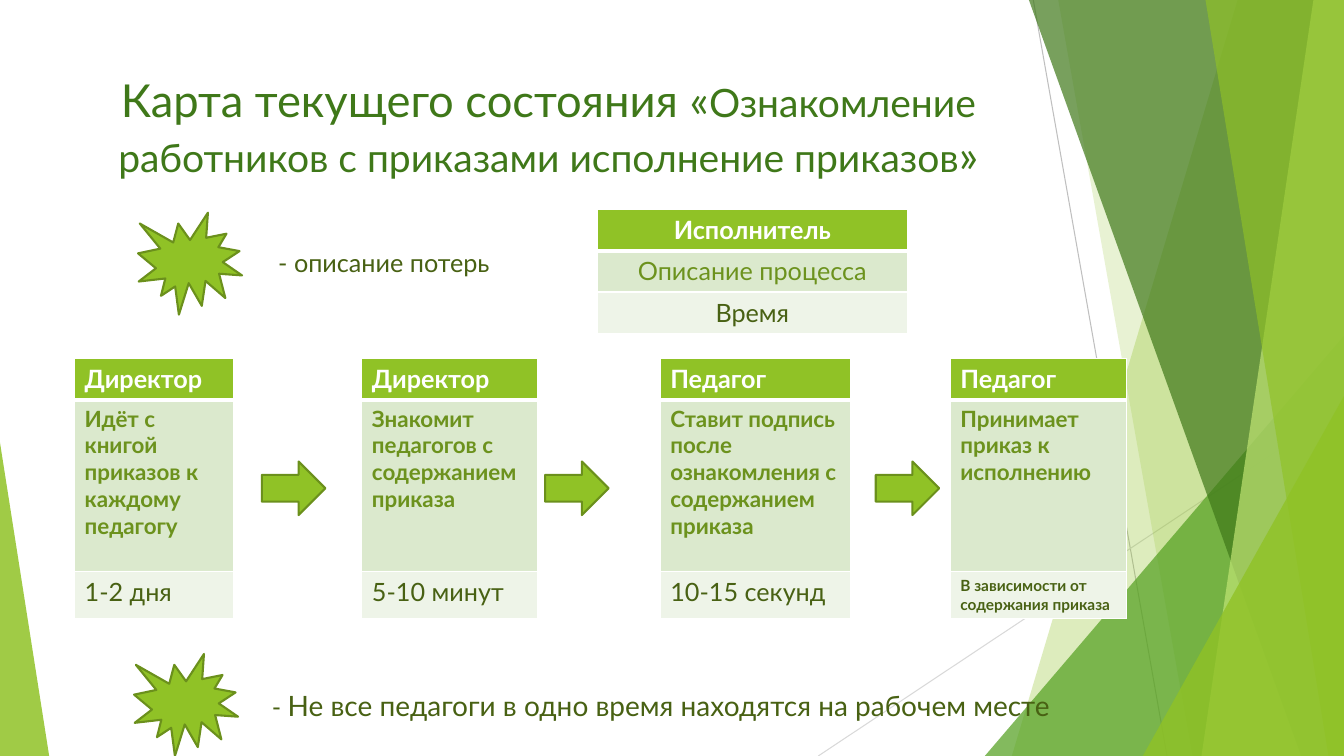
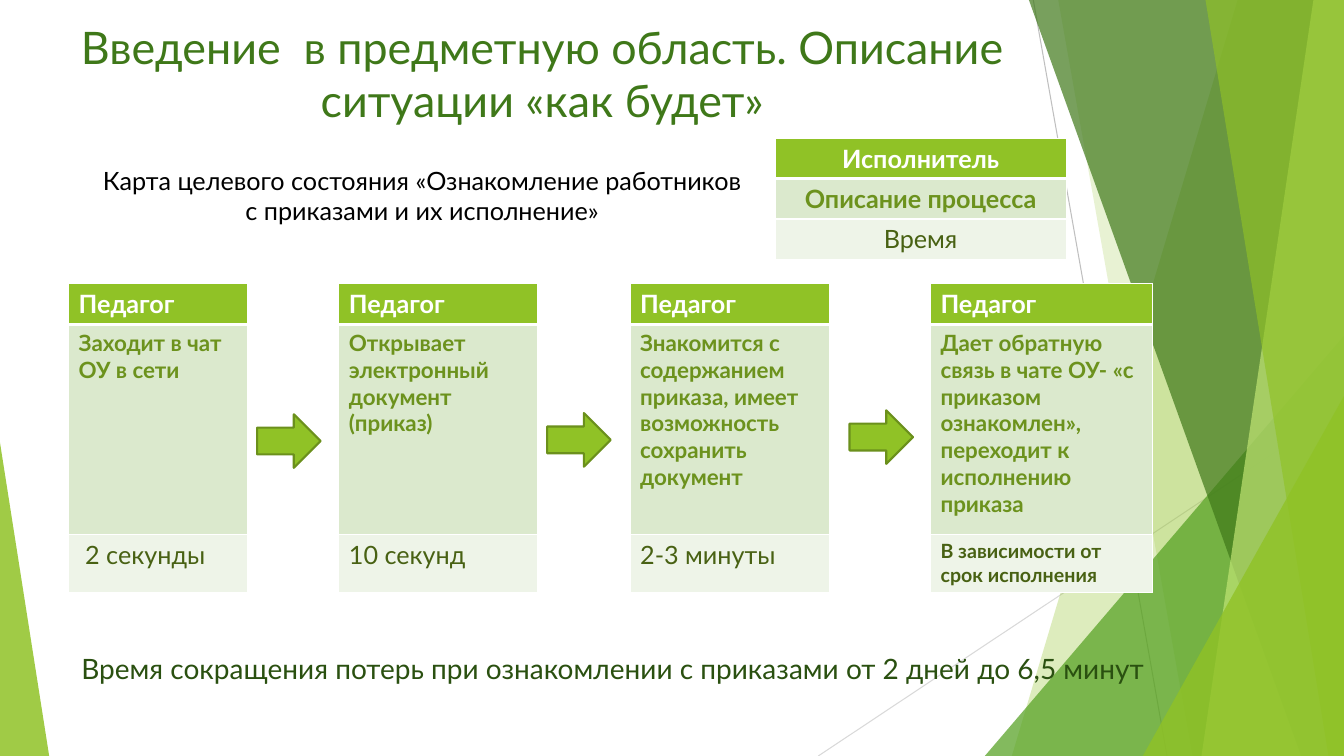
from lxml import etree
from pptx import Presentation
from pptx import util as u
from pptx.dml import color
from pptx.enum import shapes, text
from pptx.oxml import ns

WIDE, HIGH = 33.87, 19.05
FONT = "Lato"
LIME, EDGE, WHITE = "90C226", "6B901C", "FFFFFF"
GREEN, OLIVE, DARK = "3F7819", "486113", "2A5010"
ROWS = [(LIME, WHITE), ("DBE9CD", "6C921D"), ("EEF4E8", OLIVE)]
LEFT, MID = text.PP_ALIGN.LEFT, text.PP_ALIGN.CENTER
KIND = shapes.MSO_SHAPE
LINES = [((26.04, 0), (29.41, HIGH), "BFBFBF"),
         ((WIDE, 10.24), (20.62, HIGH), "D9D9D9")]
DECOR = [
    ("sheet", (31.19, 25.5), LIME, 30),
    ("sheet", (26.67, 30.05), LIME, 20),
    ("peak", (24.82, 8.46, 9.05, 10.59, 1), "54A021", 72),
    ("sheet", (25.93, 32.79), GREEN, 70),
    ("sheet", (33.1, 30.28), "C0E474", 70),
    ("sheet", (30.38, 33.48), LIME, 65),
    ("peak", (28.8, 9.98, 5.07, 9.07, 1), LIME, 80),
    ("peak", (0, 11.15, 1.24, 7.9, 0), LIME, 85),
]


def rgb(code):
    return color.RGBColor.from_string(code)


def cms(*nums):
    return [u.Cm(num) for num in nums]


def paint(shape, fill, edge=None, alpha=100):
    shape.shadow.inherit = False
    shape.fill.solid()
    shape.fill.fore_color.rgb = rgb(fill)
    if alpha < 100:
        tint = shape.fill._xPr.find(".//" + ns.qn("a:srgbClr"))
        etree.SubElement(tint, ns.qn("a:alpha"), val=str(alpha * 1000))
    if edge:
        shape.line.color.rgb = rgb(edge)
        shape.line.width = u.Pt(1.5)
    else:
        shape.line.fill.background()


def rule(slide, start, end, tone):
    line = slide.shapes.add_connector(
        shapes.MSO_CONNECTOR.STRAIGHT, *cms(*start, *end))
    line.line.color.rgb = rgb(tone)
    line.line.width = u.Pt(0.75)
    etree.SubElement(line._element.spPr, ns.qn("a:effectLst"))


def sheet(slide, top, base):
    form = slide.shapes.build_freeform(*cms(top, 0), scale=1.0)
    form.add_line_segments(
        [cms(WIDE, 0), cms(WIDE, HIGH), cms(base, HIGH)], close=True)
    return form.convert_to_shape()


def peak(slide, x, y, w, h, tip):
    shape = slide.shapes.add_shape(KIND.ISOSCELES_TRIANGLE, *cms(x, y, w, h))
    shape.adjustments[0] = tip
    return shape


def decor(slide):
    for start, end, tone in LINES:
        rule(slide, start, end, tone)
    makers = {"sheet": sheet, "peak": peak}
    for kind, args, fill, alpha in DECOR:
        paint(makers[kind](slide, *args), fill, alpha=alpha)


def style(para, size, tone, align=LEFT, bold=False):
    para.alignment = align
    font = para.font
    font.name, font.bold = FONT, bold
    font.color.rgb = rgb(tone)
    if size:
        font.size = u.Pt(size)


def label(slide, box, runs, tone, align=LEFT):
    frame = slide.shapes.add_textbox(*cms(*box)).text_frame
    frame.word_wrap = True
    para = frame.paragraphs[0]
    if len(runs) == 1:
        para.text, size = runs[0]
        style(para, size, tone, align)
        return
    style(para, None, tone, align)
    for words, size in runs:
        run = para.add_run()
        run.text = words
        run.font.size = u.Pt(size)


def title(slide, x, y, runs):
    label(slide, (x, y, 23.88, 3.66), runs, GREEN, MID)


def mark(slide, kind, x, y, w, h):
    paint(slide.shapes.add_shape(kind, *cms(x, y, w, h)), LIME, EDGE)


def burst(slide, x, y):
    mark(slide, KIND.EXPLOSION1, x, y, 2.62, 2.57)


def arrow(slide, x, y):
    mark(slide, KIND.RIGHT_ARROW, x, y, 1.6, 1.35)


def frame(cell, base):
    props = cell._tc.get_or_add_tcPr()
    for spot, side in enumerate("LRTB"):
        width = base if side == "B" else 1
        line = etree.Element(ns.qn("a:ln" + side), w=str(u.Pt(width)))
        fill = etree.SubElement(line, ns.qn("a:solidFill"))
        etree.SubElement(fill, ns.qn("a:srgbClr"), val=WHITE)
        props.insert(spot, line)


def grid(slide, x, y, cols, highs, put):
    box = cms(x, y, sum(cols), sum(highs))
    table = slide.shapes.add_table(len(highs), len(cols), *box).table
    table.first_row = table.horz_banding = False
    for col, wide in zip(table.columns, cols):
        col.width = u.Cm(wide)
    for r, high in enumerate(highs):
        table.rows[r].height = u.Cm(high)
        for c in range(len(cols)):
            cell = table.cell(r, c)
            words, size, bold, align = put(r, c)
            cell.text = words
            style(cell.text_frame.paragraphs[0], size, ROWS[r][1], align, bold)
            cell.fill.solid()
            cell.fill.fore_color.rgb = rgb(ROWS[r][0] if words else WHITE)
            frame(cell, 1 if r else 3)


def legend(slide, x, y, wide, high, bolds):
    words = ["Исполнитель", "Описание процесса", "Время"]
    grid(slide, x, y, [wide], [high] * 3,
         lambda r, c: (words[r], 18, r < bolds, MID))


def steps(slide, x, y, cols, highs, rows, small):
    last = len(cols) - 1

    def put(r, c):
        words = "" if c % 2 else rows[r][c // 2]
        note = r == 2 and c == last
        size = small if note else (18, 16, 18)[r]
        return words, size, r < 2 or note, LEFT

    grid(slide, x, y, cols, highs, put)


def current(slide):
    decor(slide)
    title(slide, 1.88, 1.7, [
        ("Карта текущего состояния «", 32.4),
        ("Ознакомление работников с приказами исполнение приказов", 27.9),
        ("»", 32.4)])
    legend(slide, 15.06, 5.28, 7.8, 1.04, 1)
    burst(slide, 3.48, 5.36)
    label(slide, (6.6, 6.12, 7.92, 1.02), [(" - описание потерь", 18)], OLIVE)
    steps(slide, 1.88, 9.04, [4.01, 3.23, 4.42, 3.1, 4.8, 2.51, 4.45],
          [1.04, 4.32, 1.17], [
        ["Директор", "Директор", "Педагог", "Педагог"],
        ["Идёт с книгой приказов к каждому педагогу",
         "Знакомит педагогов с содержанием приказа",
         "Ставит подпись после ознакомления с содержанием приказа",
         "Принимает приказ к исполнению"],
        ["1-2 дня", "5-10 минут", "10-15 секунд",
         "В зависимости от содержания приказа"]], 11)
    burst(slide, 3.38, 16.48)
    for x in (6.6, 13.74, 22.07):
        arrow(slide, x, 11.63)
    label(slide, (6.6, 17.22, 20.62, 1.12), [
        ("- ", 18),
        ("Не все педагоги в одно время находятся на рабочем месте", 20)], OLIVE)


def target(slide):
    decor(slide)
    title(slide, 1.73, 0.36, [(
        "Введение  в предметную область. Описание ситуации «как будет»", 32)])
    legend(slide, 19.53, 3.48, 7.34, 1.02, 2)
    label(slide, (2.26, 4.04, 16.76, 1.8), [(
        "Карта целевого состояния «Ознакомление работников\v"
        "с приказами и их исполнение»", 18)], "000000", MID)
    steps(slide, 1.73, 7.14, [4.52, 2.29, 5, 2.34, 5.03, 2.54, 5.59],
          [1.04, 5.28, 1.47], [
        ["Педагог"] * 4,
        ["Заходит в чат ОУ в сети",
         "Открывает электронный документ (приказ)",
         "Знакомится с содержанием приказа, имеет возможность "
         "сохранить документ",
         "Дает обратную связь в чате ОУ- «с приказом ознакомлен», "
         "переходит к исполнению приказа"],
        [" 2 секунды", "10 секунд", "2-3 минуты",
         "В зависимости от срок исполнения"]], 14)
    for x, y in ((6.48, 10.44), (13.79, 10.41), (21.41, 10.34)):
        arrow(slide, x, y)
    label(slide, (1.8, 16.28, 32, 1.12), [(
        "Время сокращения потерь при ознакомлении с приказами "
        "от 2 дней до 6,5 минут", 20)], DARK)


def main():
    deck = Presentation()
    deck.slide_width, deck.slide_height = cms(WIDE, HIGH)
    for build in (current, target):
        build(deck.slides.add_slide(deck.slide_layouts[6]))
    deck.save("out.pptx")


if __name__ == "__main__":
    main()
